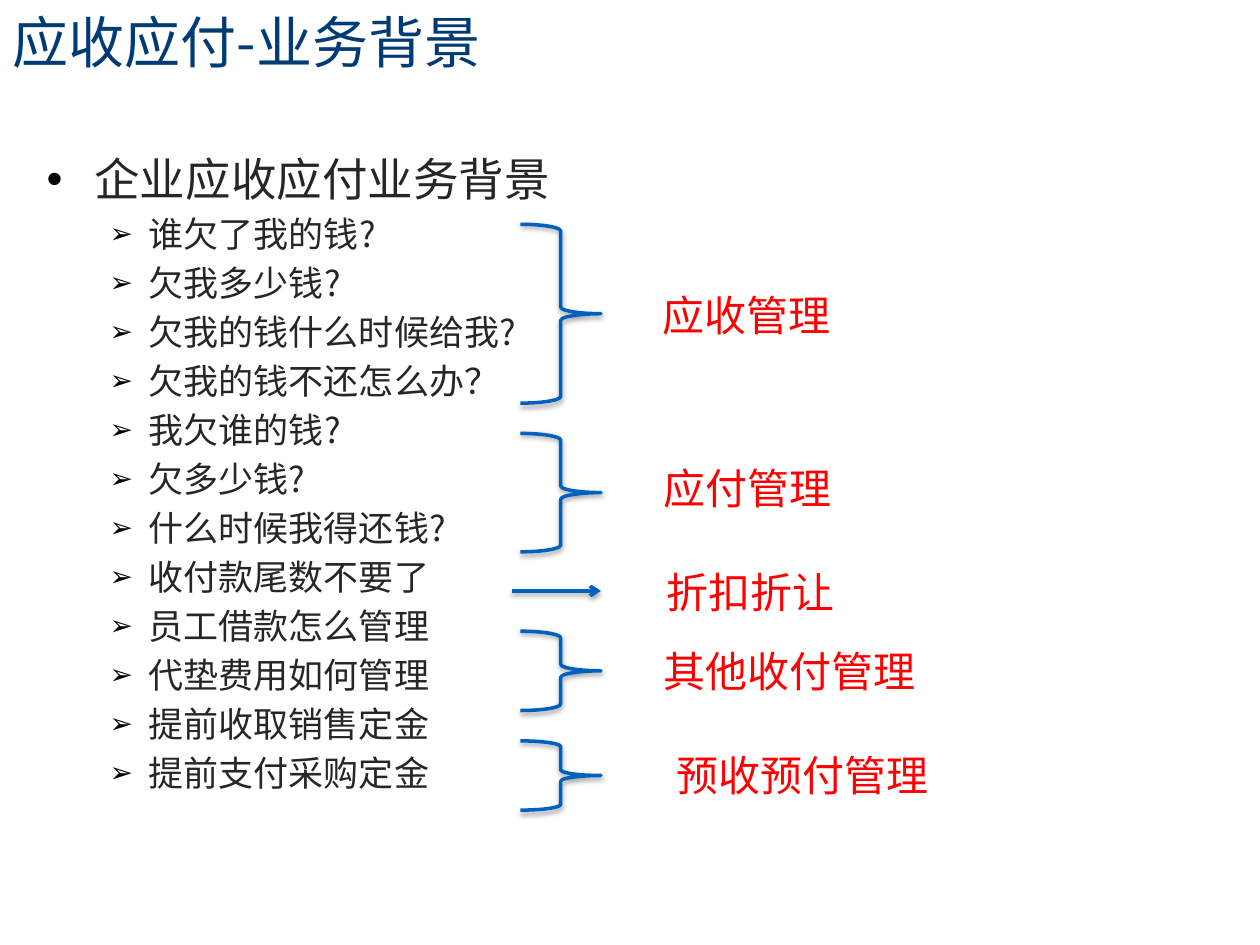
import dataclasses

import lxml.etree
import pptx
import pptx.dml.color
import pptx.enum.shapes
import pptx.enum.text
import pptx.oxml.ns
import pptx.util

Inches = pptx.util.Inches
Pt = pptx.util.Pt
qn = pptx.oxml.ns.qn


@dataclasses.dataclass(frozen=True)
class Theme:
    font: str = "Noto Sans CJK SC"
    title: str = "003B76"
    body: str = "262626"
    bullet: str = "000000"
    topic: str = "FF0000"
    mark: str = "0060C0"
    title_size: int = 32
    heading_size: int = 26
    question_size: int = 20
    topic_size: int = 24
    mark_width: int = 2


THEME = Theme()
QUESTIONS = (
    "谁欠了我的钱?", "欠我多少钱?", "欠我的钱什么时候给我?", "欠我的钱不还怎么办？",
    "我欠谁的钱?", "欠多少钱?", "什么时候我得还钱?", "收付款尾数不要了",
    "员工借款怎么管理", "代垫费用如何管理", "提前收取销售定金", "提前支付采购定金",
)
BRACES = ((1.78, 1.42), (3.44, 0.94), (5.01, 0.63), (5.88, 0.55))
TOPICS = (
    ("应收管理", 5.16, 2.25, 1.73),
    ("应付管理", 5.17, 3.62, 1.81),
    ("折扣折让", 5.19, 4.45, 1.73),
    ("其他收付管理", 5.17, 5.07, 2.43),
    ("预收预付管理", 5.27, 5.9, 2.48),
)


def apply(target, values):
    for name, value in values.items():
        setattr(target, name, value)


def add_node(parent, tag, **attributes):
    return lxml.etree.SubElement(parent, qn(tag), attributes)


def place(shape, left, top, width, height):
    apply(shape, {"left": Inches(left), "top": Inches(top),
                  "width": Inches(width), "height": Inches(height)})


def write(paragraph, text, size, color):
    run = paragraph.add_run()
    apply(run, {"text": text})
    apply(run.font, {"name": THEME.font, "size": Pt(size), "bold": False})
    run.font.color.rgb = pptx.dml.color.RGBColor.from_string(color)
    run.font._element.find(qn("a:latin")).addnext(
        lxml.etree.Element(qn("a:ea"), typeface=THEME.font))


def format_frame(frame, anchor):
    apply(frame, {"word_wrap": True, "vertical_anchor": anchor,
                  "auto_size": pptx.enum.text.MSO_AUTO_SIZE.NONE})


def add_bullet(paragraph, char, percent, margin, indent):
    properties = paragraph._p.get_or_add_pPr()
    offsets = {"marL": Inches(margin), "indent": Inches(indent)}
    for name, value in offsets.items():
        properties.set(name, str(int(value)))
    color = add_node(properties, "a:buClr")
    add_node(color, "a:srgbClr", val=THEME.bullet)
    add_node(properties, "a:buSzPct", val=str(percent * 1000))
    add_node(properties, "a:buFont", typeface="Arial")
    add_node(properties, "a:buChar", char=char)


def fill_title(title):
    place(title, 0, 0, 9.49, 0.66)
    format_frame(title.text_frame, pptx.enum.text.MSO_ANCHOR.MIDDLE)
    paragraph = title.text_frame.paragraphs[0]
    paragraph.alignment = pptx.enum.text.PP_ALIGN.LEFT
    write(paragraph, "应收应付-业务背景", THEME.title_size, THEME.title)


def fill_questions(body):
    place(body, 0.27, 1.15, 9, 4.95)
    frame = body.text_frame
    format_frame(frame, pptx.enum.text.MSO_ANCHOR.TOP)
    heading = frame.paragraphs[0]
    add_bullet(heading, "•", 100, 0.38, -0.38)
    apply(heading, {"space_before": Pt(0)})
    write(heading, "企业应收应付业务背景", THEME.heading_size, THEME.body)
    for text in QUESTIONS:
        question = frame.add_paragraph()
        add_bullet(question, "➢", 80, 0.81, -0.31)
        apply(question, {"level": 1, "space_before": Pt(4)})
        write(question, text, THEME.question_size, THEME.body)


def style_mark(mark):
    mark.line.color.rgb = pptx.dml.color.RGBColor.from_string(THEME.mark)
    mark.line.width = Pt(THEME.mark_width)
    effects = add_node(mark._element.spPr, "a:effectLst")
    shadow = add_node(effects, "a:outerShdw", blurRad=str(Pt(3.1)), dist=str(Pt(1.6)),
                      dir="5400000", algn="ctr", rotWithShape="0")
    color = add_node(shadow, "a:srgbClr", val="000000")
    add_node(color, "a:alpha", val="38000")


def add_brace(slide, top, height):
    brace = slide.shapes.add_shape(
        pptx.enum.shapes.MSO_SHAPE.RIGHT_BRACE,
        Inches(4.13), Inches(top), Inches(0.64), Inches(height))
    brace.fill.background()
    style_mark(brace)


def add_arrow(slide):
    arrow = slide.shapes.add_connector(
        pptx.enum.shapes.MSO_CONNECTOR.STRAIGHT,
        Inches(4.06), Inches(4.69), Inches(4.77), Inches(4.69))
    style_mark(arrow)
    add_node(arrow.line._get_or_add_ln(), "a:tailEnd", type="arrow")


def add_topic(slide, text, left, top, width):
    topic = slide.shapes.add_textbox(
        Inches(left), Inches(top), Inches(width), Inches(0.5))
    format_frame(topic.text_frame, pptx.enum.text.MSO_ANCHOR.MIDDLE)
    write(topic.text_frame.paragraphs[0], text, THEME.topic_size, THEME.topic)


def main():
    deck = pptx.Presentation()
    apply(deck, {"slide_width": Inches(10), "slide_height": Inches(7.5)})
    slide = deck.slides.add_slide(deck.slide_layouts[1])
    fill_title(slide.shapes.title)
    fill_questions(slide.placeholders[1])
    for top, height in BRACES:
        add_brace(slide, top, height)
    add_arrow(slide)
    for topic in TOPICS:
        add_topic(slide, *topic)
    deck.save("out.pptx")


if __name__ == "__main__":
    main()
